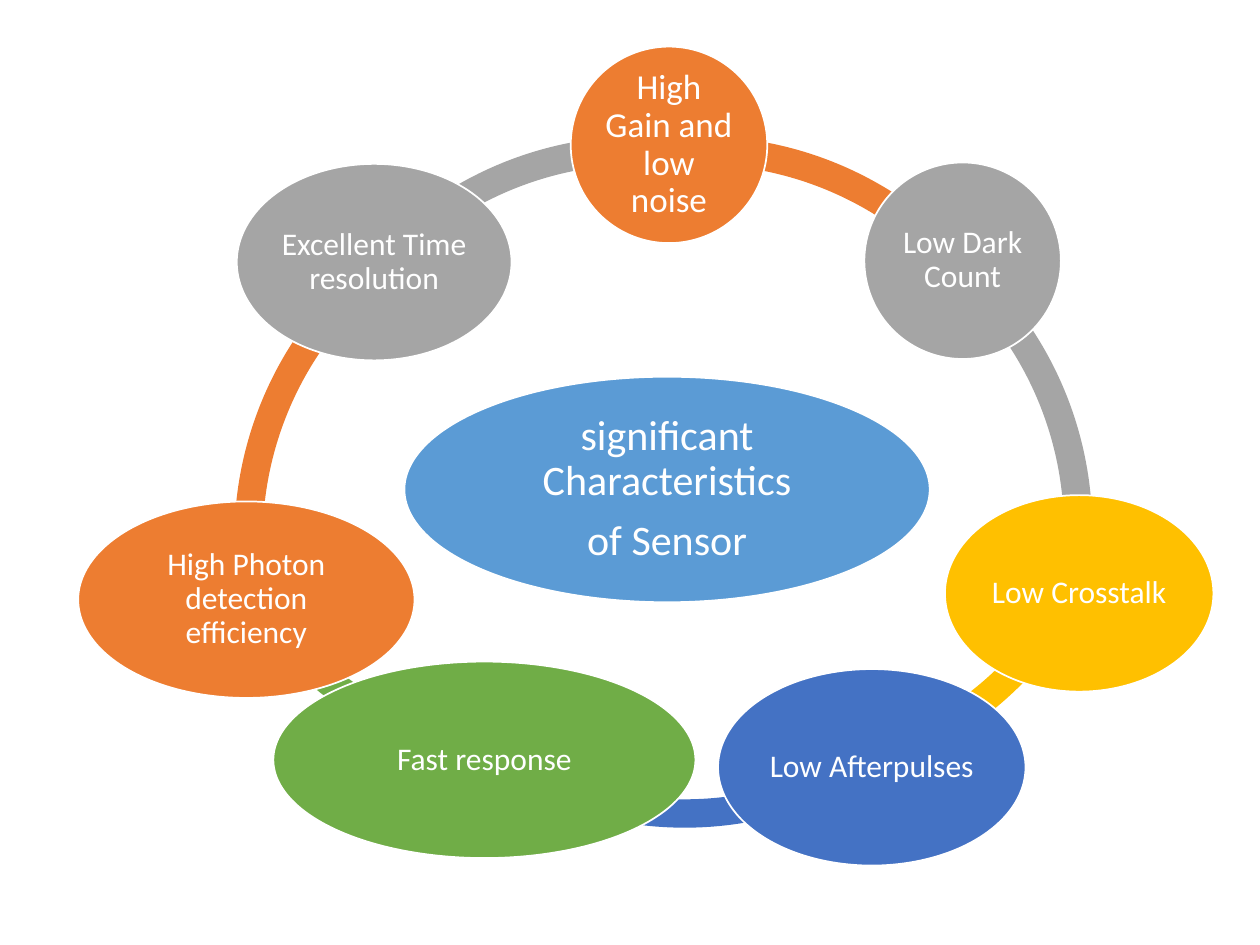
from pptx import Presentation
from pptx.dml.color import RGBColor
from pptx.enum.shapes import MSO_SHAPE as SHAPE
from pptx.enum.text import MSO_ANCHOR as ANCHOR, PP_ALIGN as ALIGN
from pptx.util import Pt

WHITE, BLUE, ORANGE, GRAY = "FFFFFF", "5B9BD5", "ED7D31", "A5A5A5"
YELLOW, INDIGO, GREEN = "FFC000", "4472C4", "70AD47"

ARC_SIZE = 415.4
ARC_THICKNESS = 0.039
NODE_HEIGHT = 112.3

# left, top, start and end angle in degrees, colour
ARCS = [
    (113.7, 51.8, 221.72, 274.8, GRAY),
    (89.9, 74.8, 170.41, 231.15, ORANGE),
    (61.1, 0, 100.14, 147.72, GREEN),
    (139.6, 31.6, 58.23, 124.08, INDIGO),
    (185, 10.7, 27.76, 72.3, YELLOW),
    (164.8, 69, 311.19, 10.51, GRAY),
    (147.5, 51.8, 265.35, 317.94, ORANGE),
]

# text, centre x, centre y, width, colour, text size
NODES = [
    ("High Gain and low noise", 338.3, 56.8, 112.3, ORANGE, 20),
    ("Low Dark Count", 506.1, 123, 112.3, GRAY, 18),
    ("Low Crosstalk", 572.7, 313.1, 153.4, YELLOW, 18),
    ("Low Afterpulses", 454.2, 412.5, 175.7, INDIGO, 18),
    ("Fast response", 232.8, 408.2, 241.2, GREEN, 18),
    ("High Photon detection efficiency", 96.8, 316.7, 192.2, ORANGE, 18),
    ("Excellent Time resolution", 169.8, 123.8, 157, GRAY, 18),
]


def rgb(color):
    return RGBColor.from_string(color)


def add_filled(slide, kind, left, top, width, height, color):
    sp = slide.shapes.add_shape(kind, Pt(left), Pt(top), Pt(width), Pt(height))
    sp.shadow.inherit = False
    sp.fill.solid()
    sp.fill.fore_color.rgb = rgb(color)
    sp.line.fill.background()
    return sp


def write(sp, text, size=18, color=WHITE, font="Calibri"):
    """Centre the text in a shape, one paragraph for each line of it."""
    tf = sp.text_frame
    tf.word_wrap = True
    tf.vertical_anchor = ANCHOR.MIDDLE
    tf.margin_left = tf.margin_right = tf.margin_top = tf.margin_bottom = Pt(size / 10)
    lines = text.split("\n")
    for i, line in enumerate(lines):
        p = tf.paragraphs[0] if i == 0 else tf.add_paragraph()
        p.alignment = ALIGN.CENTER
        p.line_spacing = 0.9
        p.space_after = Pt(0.35 * size)
        r = p.add_run()
        r.text = line
        r.font.size = Pt(size)
        r.font.name = font
        r.font.color.rgb = rgb(color)


def add_node(slide, text, center_x, center_y, width, height, color, size):
    sp = add_filled(slide, SHAPE.OVAL, center_x - width / 2,
                    center_y - height / 2, width, height, color)
    sp.line.color.rgb = rgb(WHITE)
    sp.line.width = Pt(1)
    write(sp, text, size=size)


def add_ring(slide, left, top):
    for x, y, start, end, color in ARCS:
        sp = add_filled(slide, SHAPE.BLOCK_ARC, left + x, top + y,
                        ARC_SIZE, ARC_SIZE, color)
        # Angles are stored in 60000ths of a degree, adjustments in 100000ths.
        sp.adjustments[0] = start * 0.6
        sp.adjustments[1] = end * 0.6
        sp.adjustments[2] = ARC_THICKNESS


def add_nodes(slide, left, top):
    add_node(slide, "significant Characteristics\nof Sensor",
             left + 337.2, top + 253.7, 300.2, 128.9, BLUE, 24)
    for text, x, y, width, color, size in NODES:
        add_node(slide, text, left + x, top + y, width, NODE_HEIGHT, color, size)


def main():
    prs = Presentation()
    prs.slide_width, prs.slide_height = Pt(720), Pt(540)
    slide = prs.slides.add_slide(prs.slide_layouts[6])
    left, top = 44, 26
    add_ring(slide, left, top)
    add_nodes(slide, left, top)
    prs.save("out.pptx")


if __name__ == "__main__":
    main()
